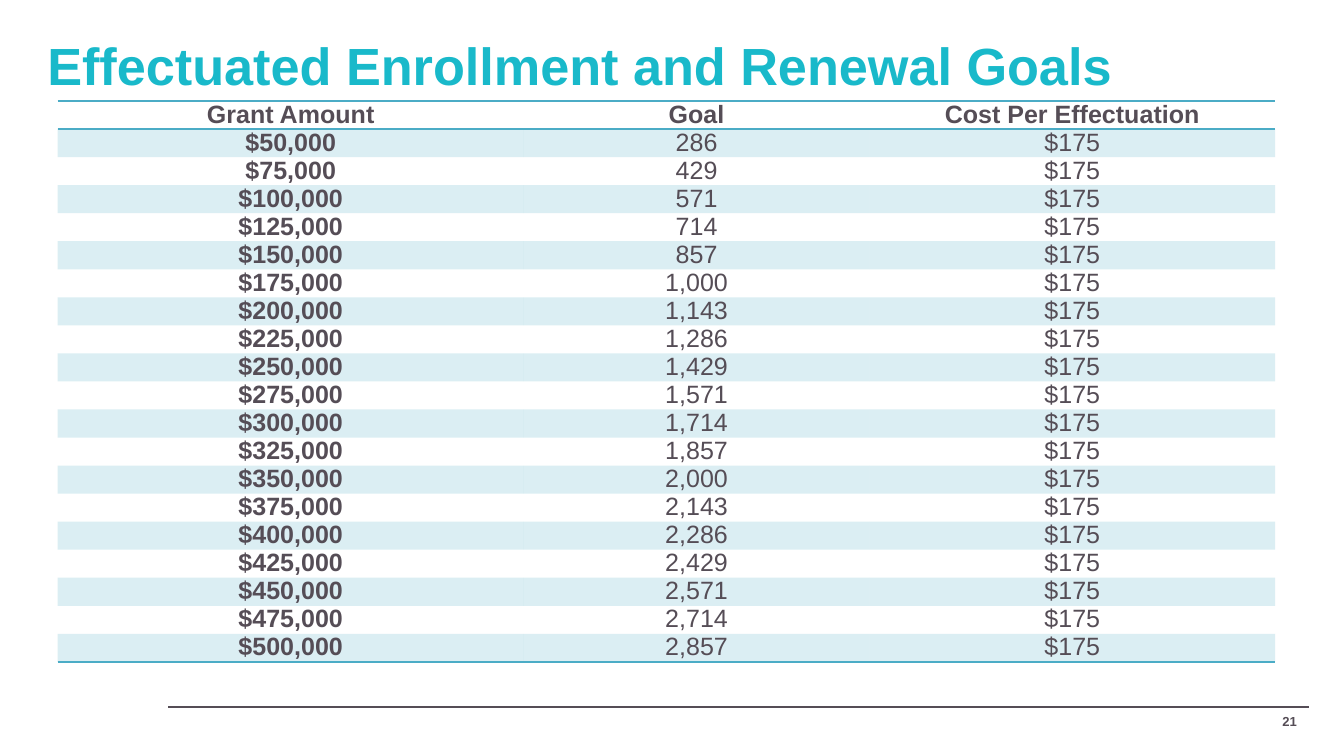
from lxml import etree
from pptx import Presentation
from pptx.dml.color import RGBColor
from pptx.enum.shapes import MSO_CONNECTOR
from pptx.enum.text import MSO_ANCHOR, PP_ALIGN
from pptx.oxml.ns import qn
from pptx.util import Cm, Pt

TITLE_COLOR = RGBColor(0x19, 0xB9, 0xCA)
TEXT_COLOR = RGBColor(0x55, 0x4D, 0x56)
TABLE_COLOR = RGBColor(0x4B, 0xAC, 0xC6)
FONT = "Arial"
NO_STYLE = "{2D5ABB26-0587-4C30-8999-92F81FD0307C}"

COST_PER_EFFECTUATION = 175
GRANT_AMOUNTS = range(50_000, 500_001, 25_000)
HEADERS = ("Grant Amount", "Goal", "Cost Per Effectuation")
COLUMN_WIDTHS = (8.81, 6.53, 7.67)
ROW_HEIGHT = 0.53


def add_run(paragraph, text, size, color, bold=True):
    run = paragraph.add_run()
    run.text = text
    run.font.name = FONT
    run.font.size = Pt(size)
    run.font.bold = bold
    run.font.color.rgb = color


def add_border(cell, side):
    """Draw one side of a cell; call before the cell gets its fill."""
    line = etree.SubElement(cell._tc.get_or_add_tcPr(), qn(f"a:{side}"), w=str(Pt(1)))
    fill = etree.SubElement(line, qn("a:solidFill"))
    etree.SubElement(fill, qn("a:srgbClr"), val=str(TABLE_COLOR))


def fill_band(cell):
    cell.fill.solid()
    cell.fill.fore_color.rgb = TABLE_COLOR
    color = cell._tc.tcPr.find(qn("a:solidFill")).find(qn("a:srgbClr"))
    etree.SubElement(color, qn("a:alpha"), val="20000")


def place_title(slide, left, top, width, height):
    title = slide.shapes.title
    title.left, title.top, title.width, title.height = left, top, width, height
    frame = title.text_frame
    frame.word_wrap = True
    frame.vertical_anchor = MSO_ANCHOR.MIDDLE
    paragraph = frame.paragraphs[0]
    paragraph.alignment = PP_ALIGN.LEFT
    add_run(paragraph, "Effectuated Enrollment and Renewal Goals", 28, TITLE_COLOR)


def place_goal_table(slide, left, top):
    rows = [HEADERS]
    for amount in GRANT_AMOUNTS:
        goal = round(amount / COST_PER_EFFECTUATION)
        rows.append((f"${amount:,}", f"{goal:,}", f"${COST_PER_EFFECTUATION}"))

    frame = slide.shapes.add_table(
        len(rows), len(HEADERS), left, top,
        Cm(sum(COLUMN_WIDTHS)), Cm(ROW_HEIGHT * len(rows)))
    table = frame.table
    table.horz_banding = False
    table._tbl.tblPr.find(qn("a:tableStyleId")).text = NO_STYLE
    for column, width in zip(table.columns, COLUMN_WIDTHS):
        column.width = Cm(width)

    last_row = len(rows) - 1
    for row_index, row in enumerate(rows):
        table.rows[row_index].height = Cm(ROW_HEIGHT)
        for column_index, text in enumerate(row):
            cell = table.cell(row_index, column_index)
            cell.margin_left = cell.margin_right = Cm(0.15)
            cell.margin_top = cell.margin_bottom = 0
            cell.vertical_anchor = MSO_ANCHOR.MIDDLE

            # Rules around the header and below the last row
            if row_index == 0:
                add_border(cell, "lnT")
            if row_index in (0, last_row):
                add_border(cell, "lnB")

            # Alternate bands
            if row_index % 2:
                fill_band(cell)
            else:
                cell.fill.background()

            paragraph = cell.text_frame.paragraphs[0]
            paragraph.alignment = PP_ALIGN.CENTER
            paragraph.line_spacing = 0.97
            add_run(paragraph, text, 13.4, TEXT_COLOR,
                    bold=row_index == 0 or column_index == 0)


def place_footer_rule(slide, left, top, width):
    rule = slide.shapes.add_connector(
        MSO_CONNECTOR.STRAIGHT, left, top, left + width, top)
    rule.line.color.rgb = TEXT_COLOR
    rule.line.width = Pt(1)
    etree.SubElement(rule._element.spPr, qn("a:effectLst"))


def place_page_number(slide, left, top, width, height):
    frame = slide.shapes.add_textbox(left, top, width, height).text_frame
    frame.word_wrap = True
    frame.vertical_anchor = MSO_ANCHOR.MIDDLE
    paragraph = frame.paragraphs[0]
    paragraph.alignment = PP_ALIGN.RIGHT
    add_run(paragraph, "21", 7, TEXT_COLOR)


def main():
    presentation = Presentation()
    presentation.slide_width = Cm(25.4)
    presentation.slide_height = Cm(14.29)
    slide = presentation.slides.add_slide(presentation.slide_layouts[5])

    place_footer_rule(slide, Cm(3.18), Cm(13.36), Cm(21.56))
    place_title(slide, Cm(0.64), Cm(0.38), Cm(24.13), Cm(1.68))
    place_goal_table(slide, Cm(1.09), Cm(1.91))
    place_page_number(slide, Cm(22.73), Cm(13.26), Cm(2.03), Cm(0.76))

    presentation.save("out.pptx")


if __name__ == "__main__":
    main()
